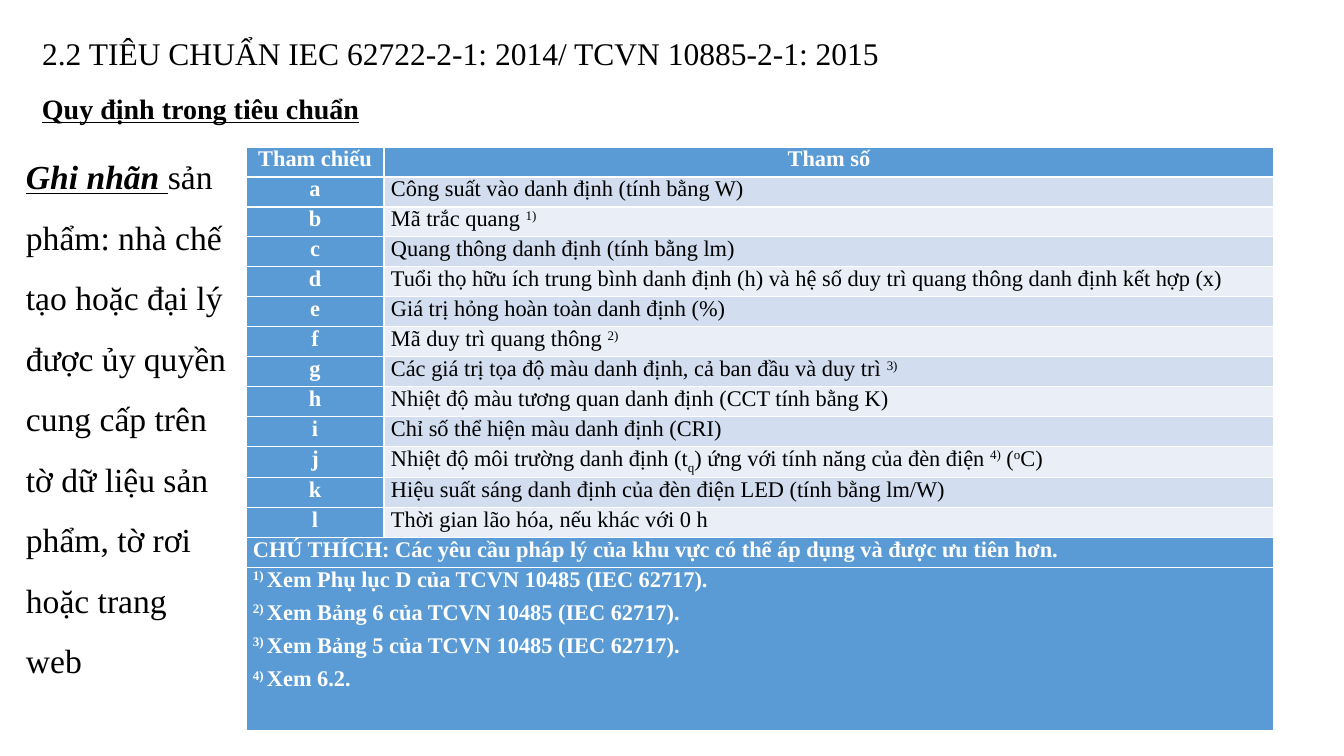
from pptx import Presentation
from pptx import util as u
from pptx.dml.color import RGBColor
from pptx.enum import text

FONT = "Times New Roman"
BLACK, WHITE, BLUE = "000000", "FFFFFF", "5B9BD5"
BANDS = ["D2DEEF", "EAEFF7"]
SUP, SUB = {"base": 30000}, {"base": -25000}

TITLE = "2.2 TIÊU CHUẨN IEC 62722-2-1: 2014/ TCVN 10885-2-1: 2015"
SUBTITLE = "Quy định trong tiêu chuẩn"
LABELLING = [
    ("Ghi nhãn ", {"bold": True, "italic": True, "underline": True}),
    "sản phẩm: nhà chế tạo hoặc đại lý được ủy quyền cung cấp trên "
    "tờ dữ liệu sản phẩm, tờ rơi hoặc trang web",
]
HEADER = ["Tham chiếu", "Tham số"]
PARAMETERS = [
    ("a", ["Công suất vào danh định (tính bằng W)"]),
    ("b", ["Mã trắc quang ", ("1)", SUP)]),
    ("c", ["Quang thông danh định (tính bằng lm)"]),
    ("d", ["Tuổi thọ hữu ích trung bình danh định (h) và hệ số duy trì "
           "quang thông danh định kết hợp (x)"]),
    ("e", ["Giá trị hỏng hoàn toàn danh định (%)"]),
    ("f", ["Mã duy trì quang thông ", ("2)", SUP)]),
    ("g", ["Các giá trị tọa độ màu danh định, cả ban đầu và duy trì ", ("3)", SUP)]),
    ("h", ["Nhiệt độ màu tương quan danh định (CCT tính bằng K)"]),
    ("i", ["Chỉ số thể hiện màu danh định (CRI)"]),
    ("j", ["Nhiệt độ môi trường danh định (t", ("q", SUB),
           ") ứng với tính năng của đèn điện ", ("4)", SUP), " (", ("o", SUP), "C)"]),
    ("k", ["Hiệu suất sáng danh định của đèn điện LED (tính bằng lm/W)"]),
    ("l", ["Thời gian lão hóa, nếu khác với 0 h"]),
]
REMARK = "CHÚ THÍCH: Các yêu cầu pháp lý của khu vực có thể áp dụng và được ưu tiên hơn."
FOOTNOTES = [
    "Xem Phụ lục D của TCVN 10485 (IEC 62717).",
    "Xem Bảng 6 của TCVN 10485 (IEC 62717).",
    "Xem Bảng 5 của TCVN 10485 (IEC 62717).",
    "Xem 6.2.",
]

TITLE_BOX = (32, 17, 924, 52)
SUBTITLE_BOX = (32, 69, 340, 62)
LABELLING_BOX = (16, 131, 223, 560)
TABLE_LEFT, TABLE_TOP = 246, 147
COLUMNS = [138, 890]
ROW, LAST_ROW, CELL_PAD = 30, 164, 7


def px(n):
    return round(n * 914400 / 100.8)


def rgb(color):
    return RGBColor.from_string(color)


def write(tf, paragraphs, size=16, color=BLACK, bold=False, underline=False,
          align=text.PP_ALIGN.LEFT, spacing=1, before=0):
    for i, runs in enumerate(paragraphs):
        p = tf.add_paragraph() if i else tf.paragraphs[0]
        p.alignment, p.line_spacing, p.space_before = align, spacing, u.Pt(before)
        for run in runs:
            words, extra = (run, {}) if isinstance(run, str) else run
            r = p.add_run()
            r.text = words
            f = r.font
            f.name, f.size, f.color.rgb = FONT, u.Pt(size), rgb(color)
            f.bold = extra.get("bold", bold)
            f.italic = extra.get("italic", False)
            f.underline = extra.get("underline", underline)
            if "base" in extra:
                r._r.get_or_add_rPr().set("baseline", str(extra["base"]))


def add_box(slide, box, runs, **fmt):
    sp = slide.shapes.add_textbox(*map(px, box))
    sp.text_frame.word_wrap = True
    write(sp.text_frame, [runs], spacing=1.5, **fmt)
    return sp


def fill_cell(cell, paragraphs, fill, **fmt):
    cell.fill.solid()
    cell.fill.fore_color.rgb = rgb(fill)
    cell.margin_left = cell.margin_right = px(CELL_PAD)
    cell.margin_top = cell.margin_bottom = 0
    write(cell.text_frame, paragraphs, before=6, **fmt)


def add_parameter_table(slide):
    heights = [ROW] * (len(PARAMETERS) + 2) + [LAST_ROW]
    table = slide.shapes.add_table(
        len(heights), len(COLUMNS), px(TABLE_LEFT), px(TABLE_TOP),
        px(sum(COLUMNS)), px(sum(heights))).table
    table.first_col = True
    for column, width in zip(table.columns, COLUMNS):
        column.width = px(width)
    for row, height in zip(table.rows, heights):
        row.height = px(height)

    heading = dict(color=WHITE, bold=True, align=text.PP_ALIGN.CENTER)
    note = dict(color=WHITE, bold=True, align=text.PP_ALIGN.JUSTIFY)
    for c, label in enumerate(HEADER):
        fill_cell(table.cell(0, c), [[label]], BLUE, **heading)
    for i, (key, runs) in enumerate(PARAMETERS):
        fill_cell(table.cell(i + 1, 0), [[key]], BLUE, **heading)
        fill_cell(table.cell(i + 1, 1), [runs], BANDS[i % 2],
                  align=text.PP_ALIGN.JUSTIFY)
    footnotes = [[(f"{n}) ", SUP), line] for n, line in enumerate(FOOTNOTES, 1)]
    first_note = len(PARAMETERS) + 1
    for r, paragraphs in enumerate([[[REMARK]], footnotes], first_note):
        table.cell(r, 0).merge(table.cell(r, 1))
        fill_cell(table.cell(r, 0), paragraphs, BLUE, **note)


def main():
    prs = Presentation()
    prs.slide_width, prs.slide_height = px(1344), px(756)
    slide = prs.slides.add_slide(prs.slide_layouts[5])

    title = slide.shapes.title
    title.left, title.top, title.width, title.height = map(px, TITLE_BOX)
    title.text_frame.auto_size = text.MSO_AUTO_SIZE.NONE
    title.text_frame.vertical_anchor = text.MSO_ANCHOR.MIDDLE
    write(title.text_frame, [[TITLE]], size=22.5, spacing=1.5)

    subtitle = add_box(slide, SUBTITLE_BOX, [SUBTITLE], size=20, bold=True, underline=True)
    subtitle.text_frame.vertical_anchor = text.MSO_ANCHOR.MIDDLE
    add_parameter_table(slide)
    add_box(slide, LABELLING_BOX, LABELLING, size=24)
    prs.save("out.pptx")


if __name__ == "__main__":
    main()
